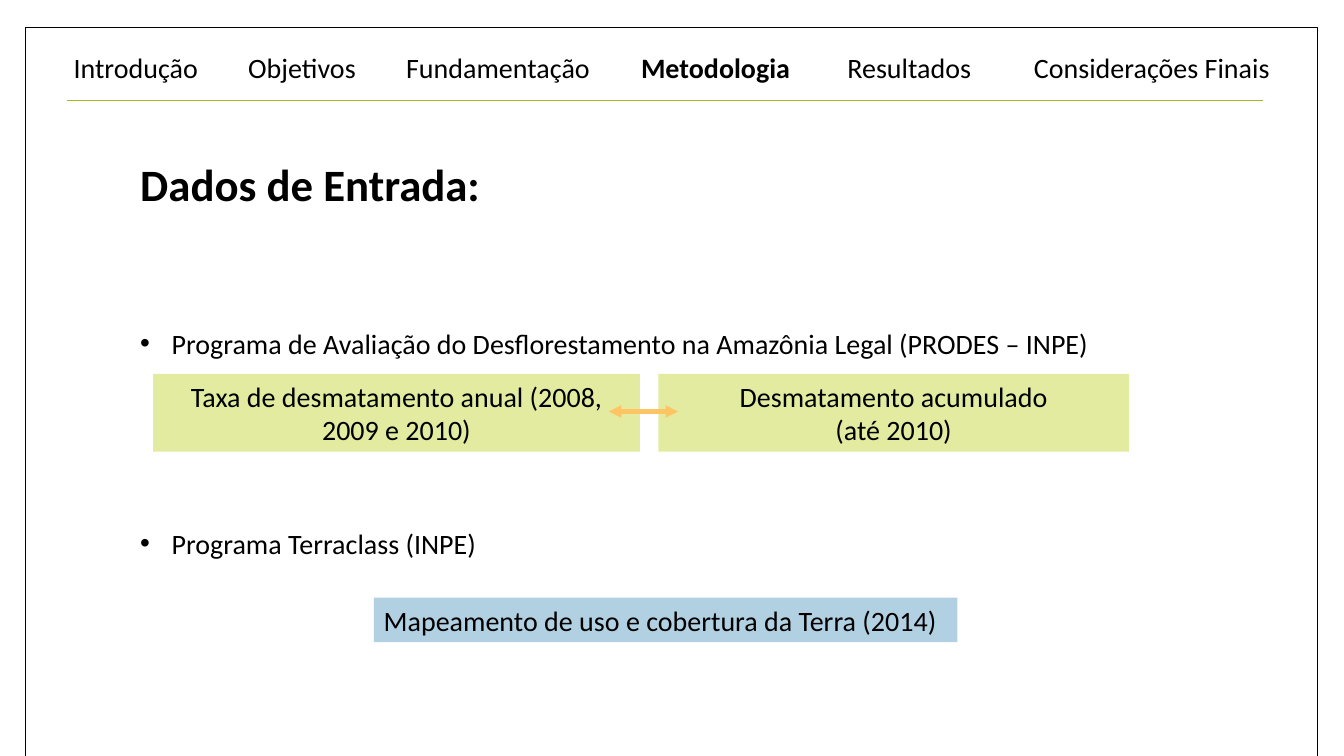
from lxml.etree import SubElement
from pptx import Presentation
from pptx.dml.color import RGBColor
from pptx.enum.shapes import MSO_CONNECTOR as LineKind, MSO_SHAPE as Preset
from pptx.enum.text import MSO_ANCHOR as Anchor, MSO_AUTO_SIZE as AutoSize, PP_ALIGN as Align
from pptx.oxml.ns import qn
from pptx.util import Cm, Pt

SECTIONS = ["Introdução", "Objetivos", "Fundamentação", "Metodologia",
            "Resultados", "Considerações Finais"]
CURRENT_SECTION = "Metodologia"
SECTION_TABS = [4.4, 8.38, 14.3, 19.5, 24.2]  # cm from the start of the text

HEADING = "Dados de Entrada:"
PROGRAMS = [  # text, points of space before
    ("Programa de Avaliação do Desflorestamento na Amazônia Legal (PRODES – INPE)", 83),
    ("Programa Terraclass (INPE)", 119),
]
GREEN, BLUE = "E2EBA0", "B1D1E3"
DATASETS = [  # lines, (left, top, width, height) in cm, fill, alignment
    (["Taxa de desmatamento anual (2008, 2009 e 2010)"],
     (3.86, 9.42, 12.27, 1.96), GREEN, Align.CENTER),
    (["Desmatamento acumulado", "(até 2010)"],
     (16.59, 9.42, 11.86, 1.96), GREEN, Align.CENTER),
    (["Mapeamento de uso e cobertura da Terra (2014)"],
     (9.42, 15.06, 14.71, 1.12), BLUE, Align.LEFT),
]
FRAME = (0.64, 0.69, 32.56, 18.39)
NAVIGATION = (1.6, 0.94, 31.75, 1.6)
BODY = (3.28, 3.81, 26.97, 10.44)
INDENT = Cm(0.79)


def color(hex_code):
    return RGBColor.from_string(hex_code)


def write(paragraph, text, size=20, bold=False, align=Align.LEFT, before=0, spacing=1.0):
    paragraph.alignment = align
    paragraph.space_before = Pt(before)
    paragraph.space_after = Pt(0)
    paragraph.line_spacing = spacing
    run = paragraph.add_run()
    run.text = text
    run.font.name = "Calibri"
    run.font.size = Pt(size)
    run.font.bold = bold
    run.font.color.rgb = color("000000")


def place(placeholder, box, anchor):
    placeholder.left, placeholder.top, placeholder.width, placeholder.height = map(Cm, box)
    frame = placeholder.text_frame
    frame.auto_size = AutoSize.NONE
    frame.word_wrap = True
    frame.vertical_anchor = anchor
    return frame


def add_rectangle(slide, box):
    rectangle = slide.shapes.add_shape(Preset.RECTANGLE, *map(Cm, box))
    rectangle.shadow.inherit = False
    return rectangle


def add_line(slide, start_x, end_x, y, hex_code, width, arrows=False):
    line = slide.shapes.add_connector(LineKind.STRAIGHT, Cm(start_x), Cm(y), Cm(end_x), Cm(y))
    line.line.color.rgb = color(hex_code)
    line.line.width = Pt(width)
    if arrows:
        for end in ("a:headEnd", "a:tailEnd"):
            SubElement(line.line._get_or_add_ln(), qn(end), type="triangle")
    SubElement(line._element.spPr, qn("a:effectLst"))


def set_bullet(paragraph, symbol=None):
    """Give the paragraph a hanging bullet, or none when there is no symbol."""
    properties = paragraph._p.get_or_add_pPr()
    indent = INDENT if symbol else 0
    properties.set("marL", str(indent))
    properties.set("indent", str(-indent))
    if symbol:
        SubElement(properties, qn("a:buFont"), typeface="Arial")
        SubElement(properties, qn("a:buChar"), char=symbol)
    else:
        SubElement(properties, qn("a:buNone"))


def add_navigation(slide):
    sections = place(slide.shapes.title, NAVIGATION, Anchor.MIDDLE).paragraphs[0]
    for index, section in enumerate(SECTIONS):
        write(sections, ("\t" if index else "") + section,
              bold=section == CURRENT_SECTION, spacing=0.9)
    tabs = SubElement(sections._p.get_or_add_pPr(), qn("a:tabLst"))
    for position in SECTION_TABS:
        SubElement(tabs, qn("a:tab"), pos=str(Cm(position)), algn="l")
    add_line(slide, 1.7, 31.83, 2.54, "A6B727", 0.79)


def add_programs(slide):
    body = place(slide.placeholders[1], BODY, Anchor.TOP)
    write(body.paragraphs[0], HEADING, size=32, bold=True)
    set_bullet(body.paragraphs[0])
    for program, before in PROGRAMS:
        paragraph = body.add_paragraph()
        write(paragraph, program, before=before)
        set_bullet(paragraph, "•")


def add_dataset(slide, lines, box, fill, align):
    dataset = add_rectangle(slide, box)
    dataset.fill.solid()
    dataset.fill.fore_color.rgb = color(fill)
    dataset.line.fill.background()
    frame = dataset.text_frame
    frame.word_wrap = True
    frame.vertical_anchor = Anchor.MIDDLE
    for index, line in enumerate(lines):
        write(frame.add_paragraph() if index else frame.paragraphs[0], line, align=align)


def main():
    deck = Presentation()
    deck.slide_width, deck.slide_height = Cm(33.87), Cm(19.05)
    slide = deck.slides.add_slide(deck.slide_layouts[1])

    border = add_rectangle(slide, FRAME)
    border.fill.background()
    border.line.color.rgb = color("000000")
    border.line.width = Pt(1)

    add_navigation(slide)
    add_programs(slide)
    for dataset in DATASETS:
        add_dataset(slide, *dataset)
    add_line(slide, 15.34, 17.09, 10.37, "FFC565", 3, arrows=True)
    deck.save("out.pptx")


if __name__ == "__main__":
    main()
